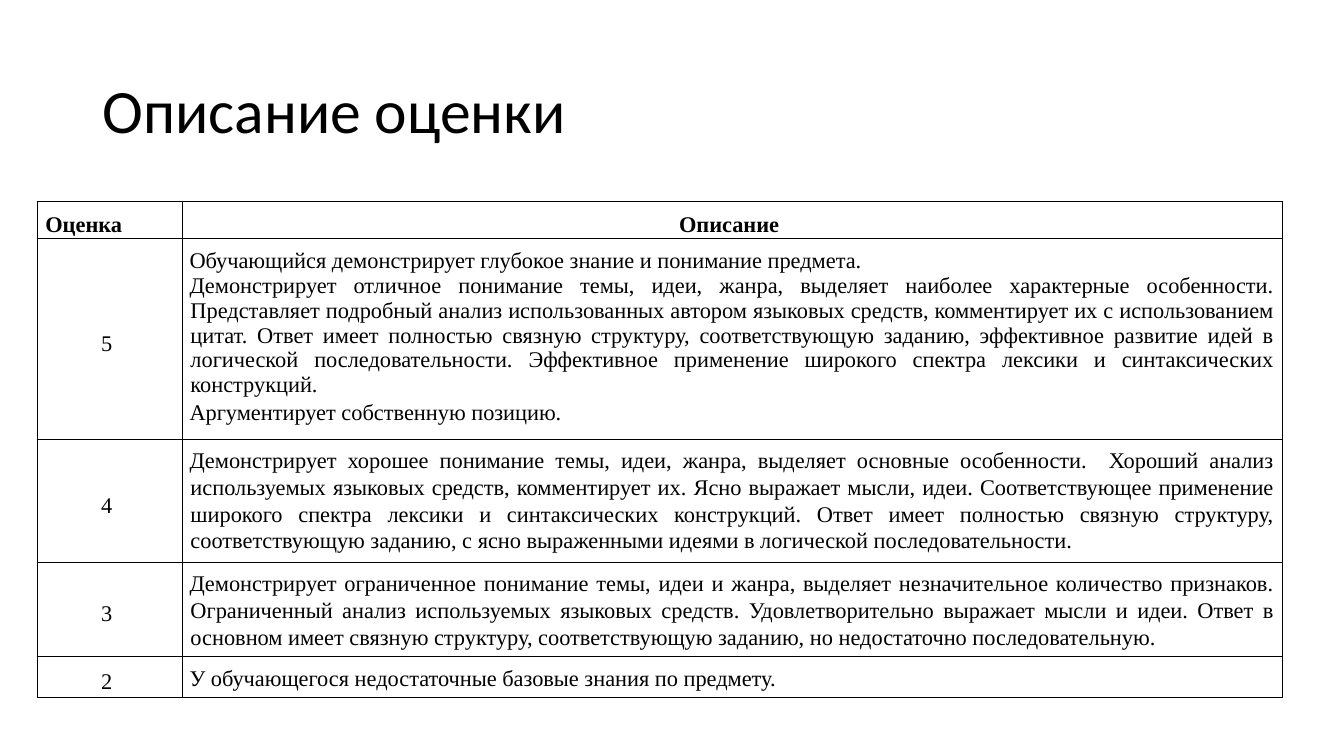
from dataclasses import dataclass

from lxml import etree
from pptx import Presentation
from pptx import util as u
from pptx.dml import color
from pptx.enum import text
from pptx.oxml import ns


@dataclass(frozen=True)
class Theme:
    ink: str = "000000"
    head: str = "Calibri"
    body: str = "Times New Roman"
    big: float = 44
    small: float = 16
    rule: float = 1


THEME = Theme()
LEFT, MID, JUST = text.PP_ALIGN.LEFT, text.PP_ALIGN.CENTER, text.PP_ALIGN.JUSTIFY

WIDTHS = [1.44, 10.91]
HEIGHTS = [0.36, 1.87, 1.15, 0.88, 0.41]
GRADES = [
    ("5 ", [
        ("Обучающийся демонстрирует глубокое знание и понимание предмета.", LEFT, 1.07),
        ("Демонстрирует отличное понимание темы, идеи, жанра, выделяет наиболее "
         "характерные особенности. Представляет подробный анализ использованных автором "
         "языковых средств, комментирует их с использованием цитат. Ответ имеет полностью "
         "связную структуру, соответствующую заданию, эффективное развитие идей в "
         "логической последовательности. Эффективное применение широкого спектра лексики "
         "и синтаксических конструкций. ", JUST, 0.99),
        ("Аргументирует собственную позицию.", LEFT, 1.07),
    ]),
    ("4 ", [
        ("Демонстрирует хорошее понимание темы, идеи, жанра, выделяет основные "
         "особенности.  Хороший анализ используемых языковых средств, комментирует их. "
         "Ясно выражает мысли, идеи. Соответствующее применение широкого спектра лексики "
         "и синтаксических конструкций. Ответ имеет полностью связную структуру, "
         "соответствующую заданию, с ясно выраженными идеями в логической "
         "последовательности. ", JUST, 1.07),
    ]),
    ("3 ", [
        ("Демонстрирует ограниченное понимание темы, идеи и жанра, выделяет "
         "незначительное количество признаков. Ограниченный анализ используемых языковых "
         "средств. Удовлетворительно выражает мысли и идеи. Ответ в основном имеет связную "
         "структуру, соответствующую заданию, но недостаточно последовательную. ",
         JUST, 1.07),
    ]),
    ("2 ", [
        ("У обучающегося недостаточные базовые знания по предмету.", LEFT, 1.07),
    ]),
]


def add_run(para, words, face, size, bold=False):
    run = para.add_run()
    run.text = words
    run.font.name = face
    run.font.size = u.Pt(size)
    run.font.bold = bold
    run.font.color.rgb = color.RGBColor.from_string(THEME.ink)


def add_title(slide, words):
    box = slide.shapes.add_textbox(u.Inches(0.92), u.Inches(0.4),
                                   u.Inches(11.5), u.Inches(1.45))
    frame = box.text_frame
    frame.word_wrap = True
    frame.vertical_anchor = text.MSO_ANCHOR.MIDDLE
    para = frame.paragraphs[0]
    para.line_spacing = 0.9
    add_run(para, words, THEME.head, THEME.big)


def add_rules(cell):
    props = cell._tc.get_or_add_tcPr()
    for place, side in enumerate(("lnL", "lnR", "lnT", "lnB")):
        line = etree.Element(ns.qn("a:" + side), w=str(u.Pt(THEME.rule)))
        fill = etree.SubElement(line, ns.qn("a:solidFill"))
        etree.SubElement(fill, ns.qn("a:srgbClr"), val=THEME.ink)
        props.insert(place, line)


def fill_cell(cell, paras, anchor, bold=False, indent=0.01):
    cell.fill.background()
    add_rules(cell)
    cell.vertical_anchor = anchor
    cell.margin_left, cell.margin_top = u.Inches(0.07), u.Inches(0.08)
    cell.margin_right, cell.margin_bottom = u.Inches(0.08), u.Inches(0)
    frame = cell.text_frame
    for order, (words, align, pitch) in enumerate(paras):
        para = frame.add_paragraph() if order else frame.paragraphs[0]
        para.alignment = align
        para.line_spacing = pitch
        para.space_after = u.Pt(0.8)
        props = para._p.get_or_add_pPr()
        props.set("marL", str(u.Inches(indent)))
        props.set("indent", str(u.Inches(-0.01)))
        add_run(para, words, THEME.body, THEME.small, bold)


def add_grid(slide):
    shape = slide.shapes.add_table(len(HEIGHTS), len(WIDTHS), u.Inches(0.37), u.Inches(2),
                                   u.Inches(sum(WIDTHS)), u.Inches(sum(HEIGHTS)))
    grid = shape.table
    grid.first_row = grid.horz_banding = False
    for col, width in zip(grid.columns, WIDTHS):
        col.width = u.Inches(width)
    for row, height in zip(grid.rows, HEIGHTS):
        row.height = u.Inches(height)

    middle, top = text.MSO_ANCHOR.MIDDLE, text.MSO_ANCHOR.TOP
    fill_cell(grid.cell(0, 0), [("Оценка", LEFT, 1.07)], middle, True, 0.02)
    fill_cell(grid.cell(0, 1), [("Описание ", MID, 1.07)], middle, True)
    for row, (grade, paras) in enumerate(GRADES, 1):
        fill_cell(grid.cell(row, 0), [(grade, MID, 1.07)], middle)
        fill_cell(grid.cell(row, 1), paras, top)


def main():
    deck = Presentation()
    deck.slide_width, deck.slide_height = u.Inches(13.33), u.Inches(7.5)
    slide = deck.slides.add_slide(deck.slide_layouts[6])
    add_title(slide, "Описание оценки")
    add_grid(slide)
    deck.save("out.pptx")


if __name__ == "__main__":
    main()
